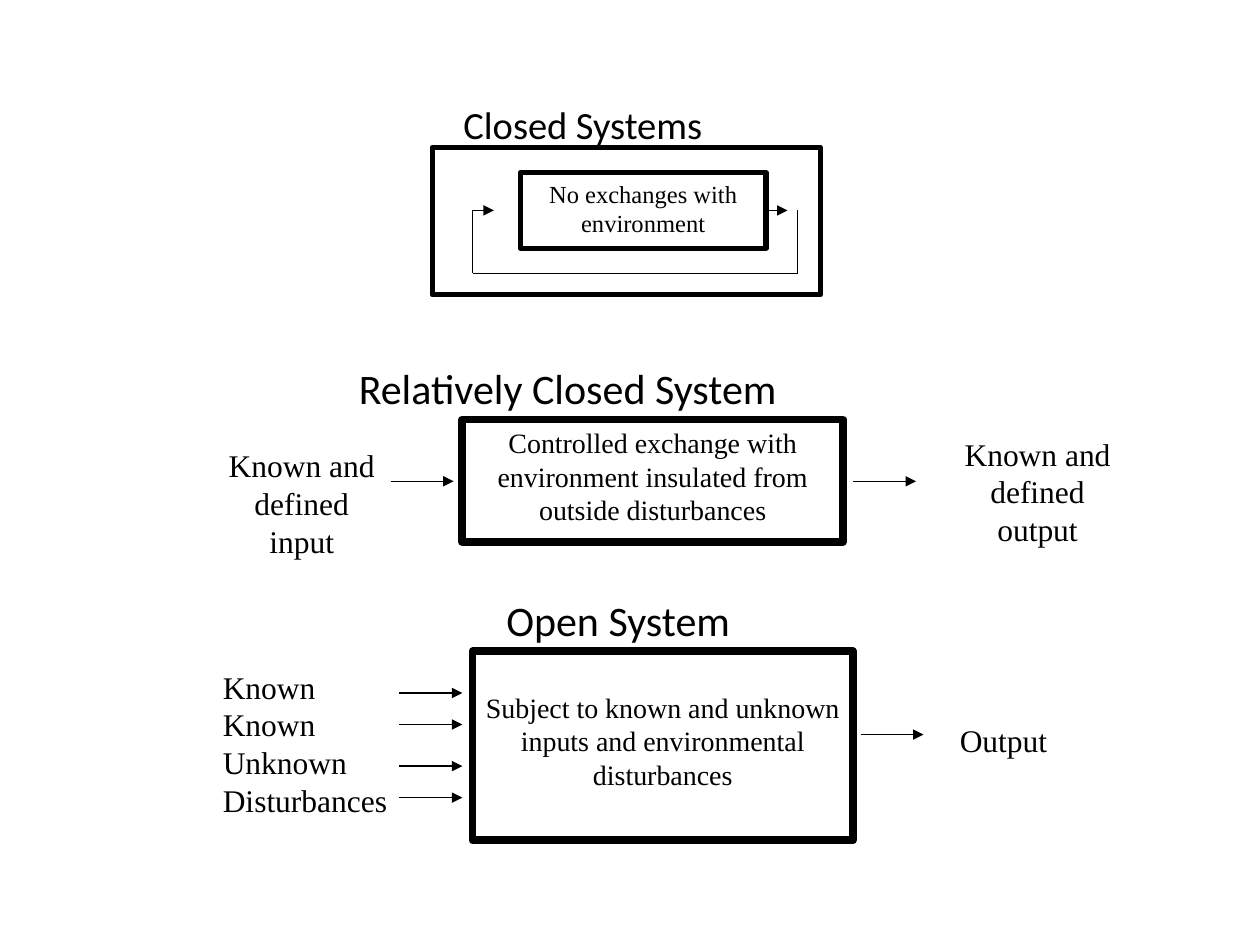
"""Build a slide comparing closed, relatively closed and open systems."""
from lxml import etree
from pptx import Presentation
from pptx.dml.color import RGBColor
from pptx.enum.shapes import MSO_CONNECTOR, MSO_SHAPE
from pptx.enum.text import MSO_ANCHOR, PP_ALIGN
from pptx.oxml.ns import qn
from pptx.util import Inches, Pt

RECTANGLE = MSO_SHAPE.RECTANGLE
STRAIGHT = MSO_CONNECTOR.STRAIGHT
TOP = MSO_ANCHOR.TOP
LEFT, CENTER = PP_ALIGN.LEFT, PP_ALIGN.CENTER
RIGHT_SIDE = 3
COLORS = {"ink": "000000"}
INK = RGBColor.from_string(COLORS["ink"])
SERIF, SANS = "Times New Roman", "Calibri"

presentation = Presentation()
presentation.slide_width = Inches(10)
presentation.slide_height = Inches(7.5)
slide = presentation.slides.add_slide(presentation.slide_layouts[6])
shapes = slide.shapes


def add_text(text, *, box, size, font=SERIF, align=CENTER, border=None, top_margin=0.05):
    """Add a text box, or a bordered rectangle when a border width is given."""
    position = [Inches(length) for length in box]
    if border:
        shape = shapes.add_shape(RECTANGLE, *position)
        shape.shadow.inherit = False
        shape.fill.background()
        shape.line.color.rgb = INK
        shape.line.width = Pt(border)
    else:
        shape = shapes.add_textbox(*position)
    frame = shape.text_frame
    frame.word_wrap = True
    frame.vertical_anchor = TOP
    frame.margin_top = Inches(top_margin)
    frame.text = text
    for paragraph in frame.paragraphs:
        paragraph.alignment = align
        paragraph.font.name = font
        paragraph.font.size = Pt(size)
        paragraph.font.color.rgb = INK
    return shape


def add_line(start_x, start_y, end_x, end_y, arrow=True):
    """Add a thin line, with an arrowhead at its end by default."""
    connector = shapes.add_connector(
        STRAIGHT, Inches(start_x), Inches(start_y), Inches(end_x), Inches(end_y))
    connector.line.color.rgb = INK
    connector.line.width = Pt(0.75)
    if arrow:
        etree.SubElement(connector.line._get_or_add_ln(), qn("a:tailEnd"), type="triangle")
    etree.SubElement(connector._element.spPr, qn("a:effectLst"))
    return connector


loop_left, loop_right, loop_top, loop_bottom = 3.75, 6.33, 1.67, 2.17
closed_box = add_text("No exchanges with\nenvironment", box=(4.13, 1.37, 1.95, 0.6),
                      size=14, border=3)
add_line(loop_left, loop_top, 3.92, loop_top)
closed_exit = add_line(6.08, loop_top, 6.25, loop_top)
closed_exit.begin_connect(closed_box, RIGHT_SIDE)
add_line(loop_left, loop_top, loop_left, loop_bottom, arrow=False)
add_line(loop_left, loop_bottom, loop_right, loop_bottom, arrow=False)
add_line(loop_right, loop_top, loop_right, loop_bottom, arrow=False)
add_text("", box=(3.43, 1.17, 3.08, 1.17), size=14, border=3)

add_text("Controlled exchange with environment insulated from outside disturbances",
         box=(3.67, 3.33, 3.02, 0.97), size=16, border=4.5)
add_text("Known and defined input", box=(1.68, 3.49, 1.43, 1), size=18)
add_text("Known and defined output", box=(7.52, 3.4, 1.43, 1), size=18)

add_text("Subject to known and unknown inputs and environmental disturbances",
         box=(3.75, 5.17, 3.02, 1.5), size=16, border=4.5, top_margin=0.31)
add_text("Known\nKnown\nUnknown\nDisturbances", box=(1.67, 5.25, 2.1, 1.3),
         size=18, align=LEFT)
add_text("Output", box=(7.25, 5.67, 1.43, 0.4), size=18)

arrow_length = 0.5
arrow_starts = [(3.1, 3.82), (6.77, 3.82), (6.83, 5.83)]
arrow_starts += [(3.17, y) for y in (5.5, 5.75, 6.08, 6.33)]
for x, y in arrow_starts:
    add_line(x, y, x + arrow_length, y)

for title, box, size in (
    ("Closed Systems", (3.58, 0.75, 2.92, 0.47), 22),
    ("Relatively Closed System", (2.75, 2.83, 5.06, 0.5), 24),
    ("Open System", (3.92, 4.67, 2.57, 0.5), 24),
):
    add_text(title, box=box, size=size, font=SANS, align=LEFT)

presentation.save("out.pptx")
